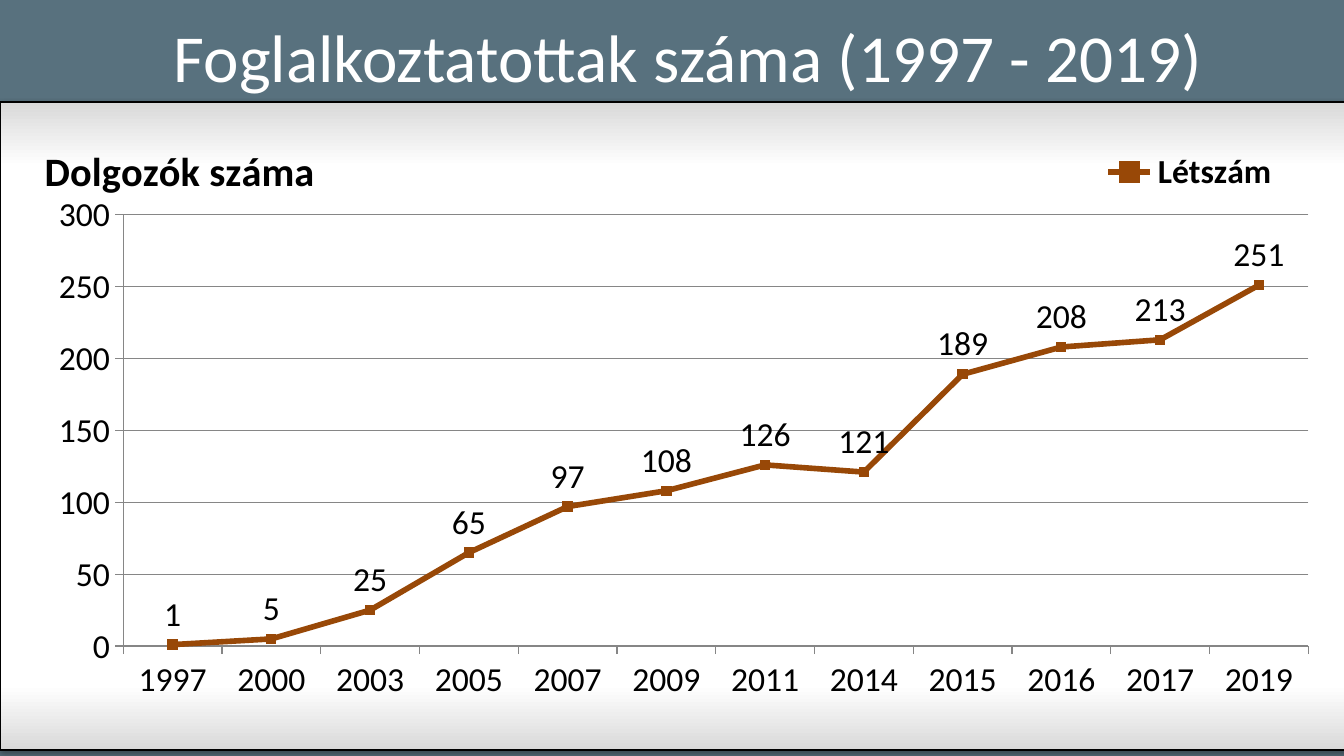
from dataclasses import dataclass

from lxml import etree
from pptx import Presentation
from pptx import util as u
from pptx.chart.data import CategoryChartData
from pptx.dml.color import RGBColor
from pptx.enum import chart as charts, shapes, text
from pptx.oxml import parse_xml
from pptx.oxml.ns import nsdecls, qn


@dataclass(frozen=True)
class Theme:
    font: str = "Calibri"
    background: str = "58717E"
    panel_edge: str = "D9D9D9"
    panel_middle: str = "FFFFFF"
    title: str = "FFFFFF"
    ink: str = "000000"
    grid: str = "868686"
    series: str = "984807"
    title_size: float = 36
    chart_title_size: float = 21.6
    chart_size: float = 18


THEME = Theme()
HEADCOUNT = {
    "1997": 1, "2000": 5, "2003": 25, "2005": 65, "2007": 97, "2009": 108,
    "2011": 126, "2014": 121, "2015": 189, "2016": 208, "2017": 213, "2019": 251,
}


def rgb(value):
    return RGBColor.from_string(value)


def style_font(font, size, color, bold=False):
    font.name, font.size, font.bold = THEME.font, u.Pt(size), bold
    font.color.rgb = rgb(color)


def style_line(line, color, width):
    line.color.rgb = rgb(color)
    line.width = u.Pt(width)


def add_title(slide, words, left, top, width, height):
    title = slide.shapes.title
    title.left, title.top = u.Inches(left), u.Inches(top)
    title.width, title.height = u.Inches(width), u.Inches(height)
    frame = title.text_frame
    frame.text = words
    frame.vertical_anchor = text.MSO_ANCHOR.MIDDLE
    paragraph = frame.paragraphs[0]
    paragraph.alignment = text.PP_ALIGN.CENTER
    style_font(paragraph.font, THEME.title_size, THEME.title)


def add_panel(slide, left, top, width, height):
    panel = slide.shapes.add_shape(
        shapes.MSO_SHAPE.RECTANGLE, *map(u.Inches, (left, top, width, height)))
    style_line(panel.line, THEME.ink, 0.75)

    # Four gradient stops: grey edges, white middle
    panel.fill.gradient()
    panel.fill.gradient_angle = 90
    stops = panel._element.spPr.find(".//" + qn("a:gsLst"))
    for stop in list(stops):
        stops.remove(stop)
    edge, middle = THEME.panel_edge, THEME.panel_middle
    for percent, color in ((0, edge), (10, middle), (90, middle), (100, edge)):
        stop = etree.SubElement(stops, qn("a:gs"), pos=str(percent * 1000))
        etree.SubElement(stop, qn("a:srgbClr"), val=color)

    # Soft shadow below
    panel.shadow.inherit = False
    effects = panel._element.spPr.find(qn("a:effectLst"))
    effects.append(parse_xml(
        f'<a:outerShdw {nsdecls("a")} blurRad="{u.Pt(3.1)}" dist="{u.Pt(1.6)}" '
        f'dir="5400000" rotWithShape="0"><a:srgbClr val="{THEME.ink}">'
        '<a:alpha val="38000"/></a:srgbClr></a:outerShdw>'))


def place(element, index, target=None, **percents):
    """Give a chart part a manual layout in percent of the chart."""
    for previous in element.findall(qn("c:layout")):
        element.remove(previous)
    layout = etree.Element(qn("c:layout"))
    manual = etree.SubElement(layout, qn("c:manualLayout"))
    values = {"layoutTarget": target} if target else {}
    values |= {"xMode": "edge", "yMode": "edge"}
    values |= {name: round(percent / 100, 4) for name, percent in percents.items()}
    for name, value in values.items():
        etree.SubElement(manual, qn(f"c:{name}"), val=str(value))
    element.insert(index, layout)


def style_axis(axis):
    axis.major_tick_mark = charts.XL_TICK_MARK.OUTSIDE
    axis.minor_tick_mark = charts.XL_TICK_MARK.NONE
    style_line(axis.format.line, THEME.grid, 0.75)


def style_series(series):
    series.smooth = False
    style_line(series.format.line, THEME.series, 3)
    marker = series.marker
    marker.style, marker.size = charts.XL_MARKER_STYLE.AUTOMATIC, 5
    marker.format.fill.solid()
    marker.format.fill.fore_color.rgb = rgb(THEME.series)
    style_line(marker.format.line, THEME.series, 0.75)
    labels = series.data_labels
    labels.show_value = True
    labels.position = charts.XL_LABEL_POSITION.ABOVE


def add_line_chart(slide, title, name, values, left, top, width, height):
    data = CategoryChartData()
    data.categories = list(values)
    data.add_series(name, list(values.values()))
    chart = slide.shapes.add_chart(
        charts.XL_CHART_TYPE.LINE_MARKERS,
        *map(u.Inches, (left, top, width, height)), data).chart
    style_font(chart.font, THEME.chart_size, THEME.ink)
    plot = chart.plots[0]
    plot.vary_by_categories = False
    style_series(plot.series[0])

    # Axes and gridlines
    style_axis(chart.category_axis)
    value_axis = chart.value_axis
    style_axis(value_axis)
    value_axis.minimum_scale, value_axis.maximum_scale = 0, 300
    value_axis.major_unit = 50
    value_axis.has_major_gridlines = True
    style_line(value_axis.major_gridlines.format.line, THEME.grid, 0.75)

    # Title and legend above the plot
    chart.has_title = True
    frame = chart.chart_title.text_frame
    frame.text = title
    style_font(frame.paragraphs[0].font, THEME.chart_title_size, THEME.ink, bold=True)
    chart.has_legend = True
    legend = chart.legend
    legend.position = charts.XL_LEGEND_POSITION.LEFT
    legend.include_in_layout = True
    style_font(legend.font, THEME.chart_size, THEME.ink, bold=True)

    place(chart.chart_title._element, 1, x=0.8, y=1.9)
    place(legend._element, 1, x=81.8, y=3.5, w=15, h=9)
    plot_area = chart._chartSpace.find(".//" + qn("c:plotArea"))
    place(plot_area, 0, target="inner", x=7.4, y=15.1, w=91, h=71.5)


def main():
    presentation = Presentation()
    presentation.slide_width = u.Inches(10)
    presentation.slide_height = presentation.slide_width * 9 // 16
    slide = presentation.slides.add_slide(
        presentation.slide_layouts.get_by_name("Title Only"))
    slide.background.fill.solid()
    slide.background.fill.fore_color.rgb = rgb(THEME.background)

    add_title(slide, "Foglalkoztatottak száma (1997 - 2019)", 0.59, 0.06, 9.06, 0.71)
    add_panel(slide, 0, 0.76, 10.04, 4.82)
    add_line_chart(slide, "Dolgozók száma", "Létszám", HEADCOUNT, 0.2, 0.92, 9.69, 4.49)

    presentation.save("out.pptx")


if __name__ == "__main__":
    main()
